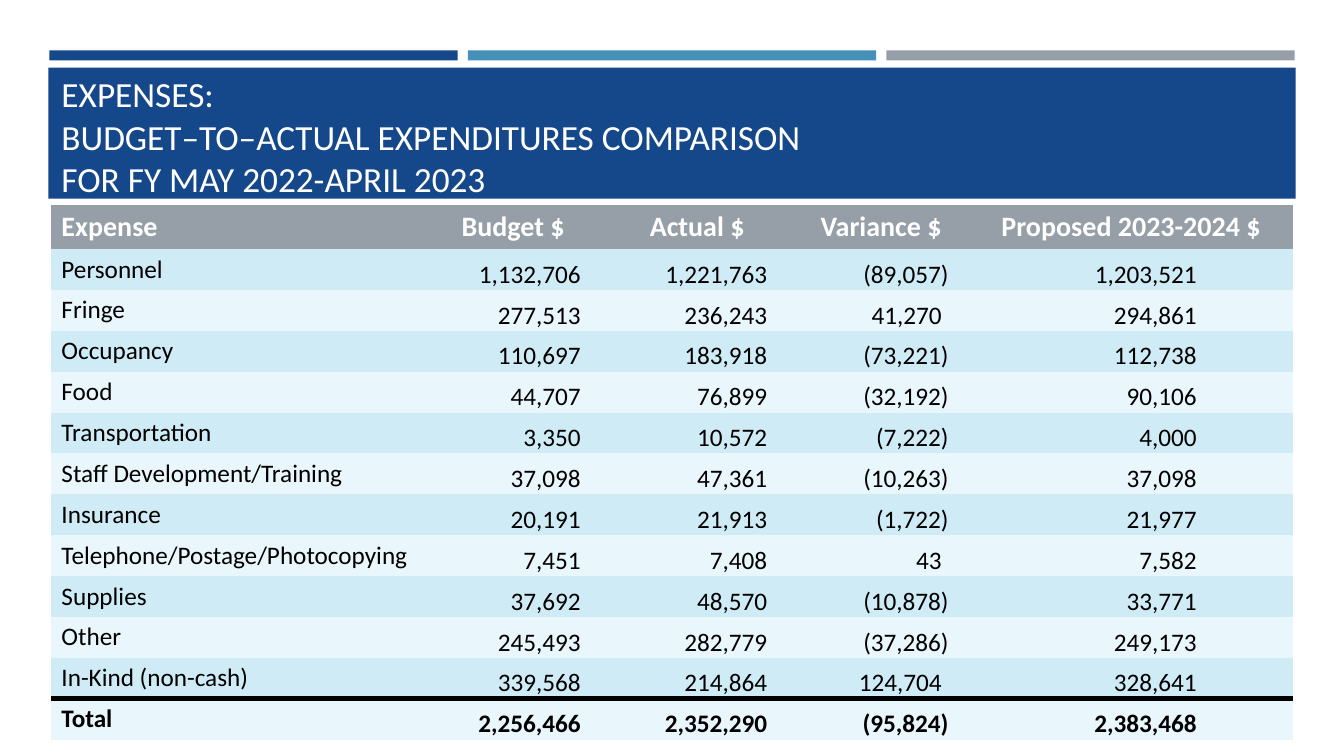
from typing import NamedTuple

from lxml import etree
from pptx import Presentation
from pptx.dml.color import RGBColor
from pptx.enum.shapes import MSO_SHAPE
from pptx.enum.text import MSO_ANCHOR, MSO_AUTO_SIZE, PP_ALIGN
from pptx.oxml.ns import qn
from pptx.util import Inches, Pt

RECT = MSO_SHAPE.RECTANGLE
TOP, BOTTOM = MSO_ANCHOR.TOP, MSO_ANCHOR.BOTTOM
LEFT, CENTER, RIGHT = PP_ALIGN.LEFT, PP_ALIGN.CENTER, PP_ALIGN.RIGHT
NAVY = RGBColor(0x15, 0x48, 0x8A)
BLUE = RGBColor(0x45, 0x90, 0xB8)
GRAY = RGBColor(0x96, 0x9F, 0xA7)
WHITE = RGBColor(0xFF, 0xFF, 0xFF)
BLACK = RGBColor(0, 0, 0)
BANDS = (RGBColor(0xE9, 0xF6, 0xFB), RGBColor(0xCF, 0xEC, 0xF6))
FONT = "Calibri"
NO_STYLE = "{2D5ABB26-0587-4C30-8999-92F81FD0307C}"


class Bar(NamedTuple):
    left: float
    top: float
    width: float
    height: float
    color: RGBColor


class Column(NamedTuple):
    heading: str
    width: float
    right_inset: float  # places the right edge of the figures


class Expense(NamedTuple):
    name: str
    budget: str
    actual: str
    variance: str
    proposed: str


BARS = [Bar(0.49 + 4.15 * i, 0.5, 4.05, 0.1, color)
        for i, color in enumerate((NAVY, BLUE, GRAY))]
BARS.append(Bar(0.48, 0.67, 12.37, 1.3, NAVY))

COLUMNS = [
    Column("Expense", 3.7, 0.1),
    Column("Budget $", 1.76, 0.21),
    Column("Actual $", 1.89, 0.25),
    Column("Variance $", 1.76, 0.21),
    Column("Proposed 2023-2024 $", 3.2, 0.95),
]

EXPENSES = [
    Expense("Personnel", "1,132,706", "1,221,763", "(89,057)", "1,203,521"),
    Expense("Fringe", "277,513", "236,243", "41,270", "294,861"),
    Expense("Occupancy", "110,697", "183,918", "(73,221)", "112,738"),
    Expense("Food", "44,707", "76,899", "(32,192)", "90,106"),
    Expense("Transportation", "3,350", "10,572", "(7,222)", "4,000"),
    Expense("Staff Development/Training", "37,098", "47,361", "(10,263)", "37,098"),
    Expense("Insurance", "20,191", "21,913", "(1,722)", "21,977"),
    Expense("Telephone/Postage/Photocopying", "7,451", "7,408", "43", "7,582"),
    Expense("Supplies", "37,692", "48,570", "(10,878)", "33,771"),
    Expense("Other", "245,493", "282,779", "(37,286)", "249,173"),
    Expense("In-Kind (non-cash)", "339,568", "214,864", "124,704", "328,641"),
    Expense("Total", "2,256,466", "2,352,290", "(95,824)", "2,383,468"),
]


def style_text(p, size: float, color: RGBColor, bold: bool, align) -> None:
    p.alignment = align
    p.font.name = FONT
    p.font.size = Pt(size)
    p.font.bold = bold
    p.font.color.rgb = color


def add_bar(slide, bar: Bar) -> None:
    sp = slide.shapes.add_shape(RECT, Inches(bar.left), Inches(bar.top),
                                Inches(bar.width), Inches(bar.height))
    sp.shadow.inherit = False
    sp.fill.solid()
    sp.fill.fore_color.rgb = bar.color
    sp.line.fill.background()


def set_title(slide, text: str) -> None:
    title = slide.shapes.title
    title.left, title.top = Inches(0.51), Inches(0.77)
    title.width, title.height = Inches(12.19), Inches(1.26)
    tf = title.text_frame
    tf.text = text
    tf.auto_size = MSO_AUTO_SIZE.NONE
    tf.vertical_anchor = BOTTOM
    style_text(tf.paragraphs[0], 25.2, WHITE, False, LEFT)
    # Bring the title in front of its band
    title.element.getparent().append(title.element)


def fill_cell(cell, text: str, fill: RGBColor) -> None:
    cell.text = text
    cell.fill.solid()
    cell.fill.fore_color.rgb = fill


def set_figure_layout(cell, column: Column, text: str) -> None:
    cell.vertical_anchor = BOTTOM
    cell.margin_left = cell.margin_top = cell.margin_bottom = 0
    # Closing parentheses hang to the right of the digits
    hang = 0.07 if column.heading == "Variance $" and text[-1] != ")" else 0
    cell.margin_right = Inches(column.right_inset + hang)


def add_top_border(cell, color: RGBColor, width: float) -> None:
    ln = etree.Element(qn("a:lnT"), w=str(Pt(width)))
    fill = etree.SubElement(ln, qn("a:solidFill"))
    etree.SubElement(fill, qn("a:srgbClr"), val=str(color))
    cell._tc.get_or_add_tcPr().insert(0, ln)


def add_expense_table(slide) -> None:
    frame = slide.shapes.add_table(
        len(EXPENSES) + 1, len(COLUMNS), Inches(0.51), Inches(2.03),
        Inches(12.31), Inches(5.24))
    table = frame.table
    table.first_row = table.horz_banding = False
    table._tbl.tblPr.find(qn("a:tableStyleId")).text = NO_STYLE

    # Header row
    table.rows[0].height = Inches(0.44)
    for c, column in enumerate(COLUMNS):
        table.columns[c].width = Inches(column.width)
        cell = table.cell(0, c)
        fill_cell(cell, column.heading, GRAY)
        style_text(cell.text_frame.paragraphs[0], 20, WHITE, True,
                   CENTER if c else LEFT)

    # Expense rows, closed by the total
    for r, expense in enumerate(EXPENSES, start=1):
        table.rows[r].height = Inches(0.4)
        is_total = r == len(EXPENSES)
        for c, (column, text) in enumerate(zip(COLUMNS, expense)):
            cell = table.cell(r, c)
            fill_cell(cell, text, BANDS[r % 2])
            style_text(cell.text_frame.paragraphs[0], 18, BLACK, is_total,
                       RIGHT if c else LEFT)
            if c:
                set_figure_layout(cell, column, text)
            else:
                cell.vertical_anchor = TOP
            if is_total:
                add_top_border(cell, BLACK, 4)


def main() -> None:
    prs = Presentation()
    prs.slide_width, prs.slide_height = Inches(13.33), Inches(7.5)
    slide = prs.slides.add_slide(prs.slide_layouts[5])
    for bar in BARS:
        add_bar(slide, bar)
    set_title(slide, "EXPENSES:\vBUDGET–TO–ACTUAL EXPENDITURES COMPARISON\v"
                     "FOR FY MAY 2022-APRIL 2023")
    add_expense_table(slide)
    prs.save("out.pptx")


if __name__ == "__main__":
    main()
